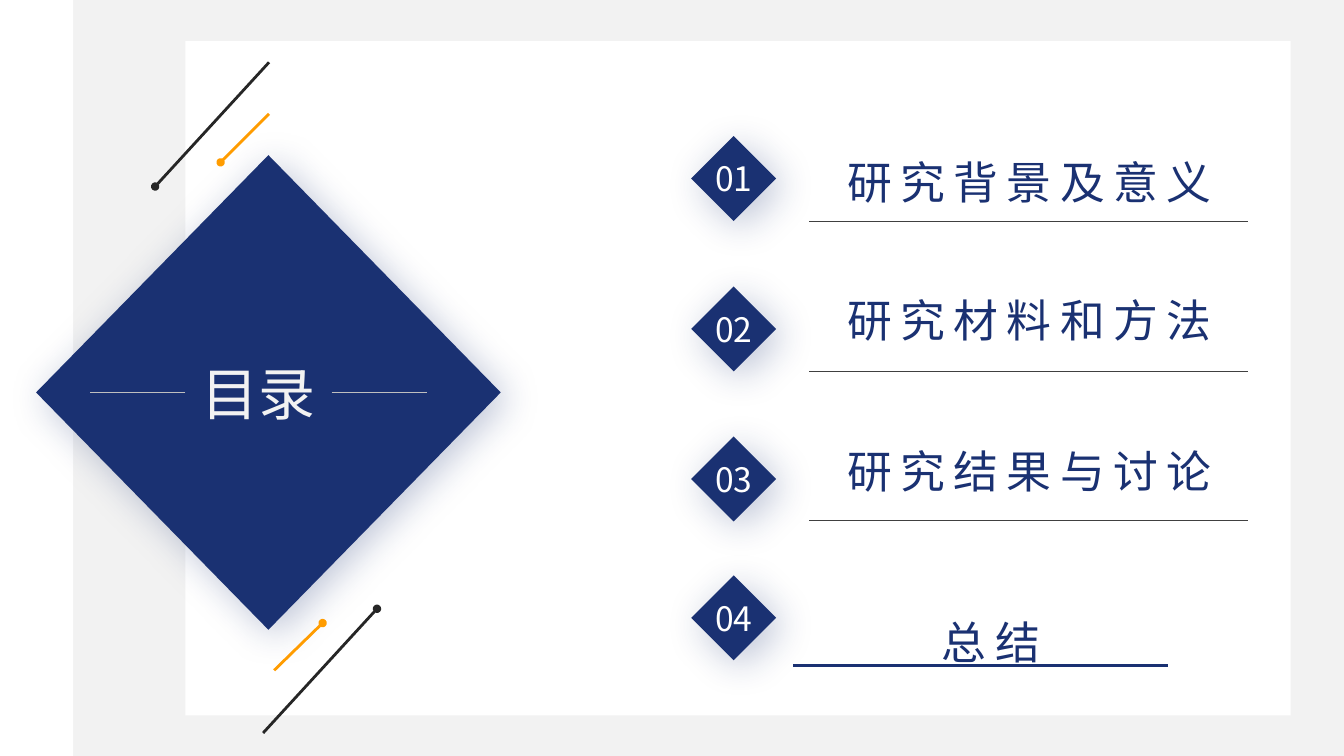
from dataclasses import dataclass

from lxml.etree import SubElement
from pptx import Presentation
from pptx.dml.color import RGBColor
from pptx.enum.shapes import MSO_CONNECTOR, MSO_SHAPE
from pptx.enum.text import MSO_ANCHOR, PP_ALIGN
from pptx.oxml import parse_xml
from pptx.oxml.ns import nsdecls, qn
from pptx.shapes.autoshape import Shape
from pptx.slide import Slide
from pptx.util import Cm, Pt

NAVY = "1A3172"
WHITE = "FFFFFF"
GREY = "F2F2F2"
BLACK = "262626"
ORANGE = "FF9C00"
CJK = "Noto Sans CJK JP"
BADGE_LEFT = 17.42
BADGE_SIZE = 2.14


@dataclass
class Box:
    left: float
    top: float
    width: float
    height: float


@dataclass
class Line:
    x1: float
    y1: float
    x2: float
    y2: float
    color: str
    width: float
    dot: str = ""


@dataclass
class TextStyle:
    size: float
    color: str
    font: str = CJK
    tracking: int = 0
    spacing: float = 1.0


@dataclass
class Item:
    title: str
    badge_top: float
    title_left: float
    title_top: float
    spacing: float
    rule: Line


def rgb(value: str) -> RGBColor:
    return RGBColor.from_string(value)


def add_block(s: Slide, box: Box, color: str, kind: MSO_SHAPE = MSO_SHAPE.RECTANGLE) -> Shape:
    sp = s.shapes.add_shape(kind, Cm(box.left), Cm(box.top), Cm(box.width), Cm(box.height))
    sp.shadow.inherit = False
    sp.fill.solid()
    sp.fill.fore_color.rgb = rgb(color)
    sp.line.fill.background()
    return sp


def add_diamond(s: Slide, box: Box) -> Shape:
    sp = add_block(s, box, NAVY, MSO_SHAPE.DIAMOND)
    effects = sp._element.spPr.find(qn("a:effectLst"))
    effects.append(parse_xml(
        f'<a:outerShdw {nsdecls("a")} blurRad="{Pt(28)}" dist="{Pt(7)}" dir="2700000" '
        f'algn="tl" rotWithShape="0"><a:srgbClr val="{NAVY}"><a:alpha val="27000"/>'
        '</a:srgbClr></a:outerShdw>'))
    return sp


def set_text(sp: Shape, text: str, style: TextStyle) -> None:
    tf = sp.text_frame
    tf.text = text
    p = tf.paragraphs[0]
    p.alignment = PP_ALIGN.CENTER
    p.line_spacing = style.spacing
    r = p.runs[0]
    r.font.size = Pt(style.size)
    r.font.color.rgb = rgb(style.color)
    r.font.name = style.font
    rPr = r._r.get_or_add_rPr()
    rPr.set("spc", str(style.tracking * 100))
    SubElement(rPr, qn("a:ea")).set("typeface", style.font)


def add_label(s: Slide, box: Box, text: str, style: TextStyle, anchor: MSO_ANCHOR) -> None:
    sp = s.shapes.add_textbox(Cm(box.left), Cm(box.top), Cm(box.width), Cm(box.height))
    sp.text_frame.word_wrap = True
    sp.text_frame.vertical_anchor = anchor
    set_text(sp, text, style)


def add_line(s: Slide, line: Line) -> None:
    sp = s.shapes.add_connector(
        MSO_CONNECTOR.STRAIGHT, Cm(line.x1), Cm(line.y1), Cm(line.x2), Cm(line.y2))
    sp.line.color.rgb = rgb(line.color)
    sp.line.width = Pt(line.width)
    if line.dot:
        SubElement(sp.line._get_or_add_ln(), qn(f"a:{line.dot}")).set("type", "oval")
    SubElement(sp._element.spPr, qn("a:effectLst"))


def add_item(s: Slide, number: int, item: Item) -> None:
    badge = add_diamond(s, Box(BADGE_LEFT, item.badge_top, BADGE_SIZE, BADGE_SIZE))
    badge.text_frame.word_wrap = False
    badge.text_frame.vertical_anchor = MSO_ANCHOR.MIDDLE
    set_text(badge, f"{number:02}", TextStyle(24, WHITE))
    style = TextStyle(32, NAVY, tracking=6, spacing=item.spacing)
    add_label(s, Box(item.title_left, item.title_top, 11.45, 2.08), item.title, style, MSO_ANCHOR.TOP)
    add_line(s, item.rule)


def thin_rule(y: float) -> Line:
    return Line(20.4, y, 31.45, y, "404040", 0.5)


BLOCKS = [
    (Box(0, 0, 1.85, 19.05), WHITE),
    (Box(1.85, 0, 32.02, 19.05), GREY),
    (Box(4.67, 1.04, 27.86, 16.99), WHITE),
]

ITEMS = [
    Item("研究背景及意义", 3.43, 20.22, 3.1, 1.5, thin_rule(5.57)),
    Item("研究材料和方法", 7.22, 20.22, 7.26, 1.0, thin_rule(9.36)),
    Item("研究结果与讨论", 11.0, 20.22, 11.05, 1.0, thin_rule(13.12)),
    Item("总结", 14.5, 19.25, 14.68, 1.5, Line(19.99, 16.77, 29.44, 16.77, NAVY, 1.5)),
]

LINES = [
    Line(4.67, 9.88, 2.26, 9.88, "BFBFBF", 0.5),
    Line(8.36, 9.88, 10.77, 9.88, "BFBFBF", 0.5),
    Line(6.78, 1.57, 3.91, 4.7, BLACK, 2, "tailEnd"),
    Line(6.78, 2.87, 5.56, 4.09, ORANGE, 2, "tailEnd"),
    Line(9.5, 15.34, 6.63, 18.47, BLACK, 2, "headEnd"),
    Line(8.13, 15.7, 6.91, 16.89, ORANGE, 2, "headEnd"),
]


def main() -> None:
    prs = Presentation()
    prs.slide_width = Cm(33.87)
    prs.slide_height = Cm(19.05)
    s = prs.slides.add_slide(prs.slide_layouts[6])
    s.background.fill.solid()
    s.background.fill.fore_color.rgb = rgb(GREY)
    for box, color in BLOCKS:
        add_block(s, box, color)
    for number, item in enumerate(ITEMS, 1):
        add_item(s, number, item)
    add_diamond(s, Box(0.91, 3.91, 11.71, 11.96))
    add_label(s, Box(4.67, 8.99, 3.71, 1.8), "目录", TextStyle(40.7, GREY, "Arial"), MSO_ANCHOR.MIDDLE)
    for line in LINES:
        add_line(s, line)
    prs.save("out.pptx")


if __name__ == "__main__":
    main()
